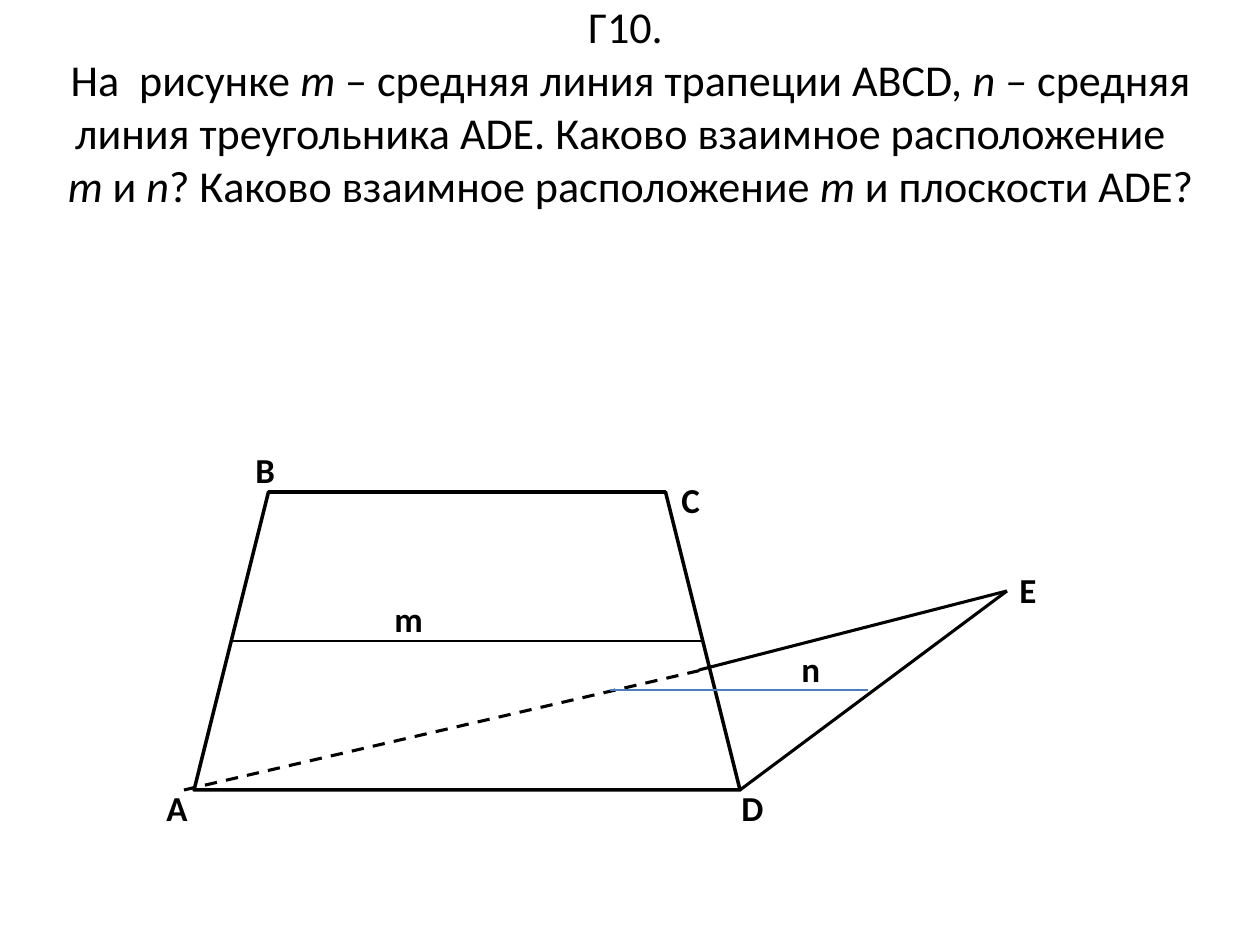
from pptx import Presentation
from pptx.dml.color import RGBColor as RGB
from pptx.enum.dml import MSO_LINE as Dash
from pptx.enum.shapes import MSO_CONNECTOR as Conn, MSO_SHAPE as Shape
from pptx.enum.text import MSO_ANCHOR as Anchor, PP_ALIGN as Align
from pptx.oxml.ns import qn
from pptx.util import Emu, Pt
from lxml import etree

BLACK = "000000"
BLUE = "4B7EBC"


def px(*vals):
    return [Emu(round(v * 914400 / 126)) for v in vals]


def style(font, **kind):
    """Give a font the common face and colour, plus the given values."""
    font.color.rgb = RGB.from_string(BLACK)
    for key, val in {"name": "Calibri", **kind}.items():
        setattr(font, key, val)


prs = Presentation()
prs.slide_width, prs.slide_height = px(1260, 945)
slide = prs.slides.add_slide(prs.slide_layouts[6])
shapes = slide.shapes

# Task text: stars enclose italics
task = (
    "Г10. \n"
    "На  рисунке *m* – средняя линия трапеции ABCD, *n – *средняя "
    "линия треугольника ADE. Каково взаимное расположение  \n"
    "*m *и *n*? Каково взаимное расположение *m *и плоскости ADE?"
)
frame = shapes.add_textbox(*px(35, 26, 1191, 159)).text_frame
frame.word_wrap = True
frame.vertical_anchor = Anchor.MIDDLE
para = frame.paragraphs[0]
para.alignment = Align.CENTER
style(para.font, size=Pt(25.2))
for i, part in enumerate(task.split("*")):
    for j, text in enumerate(part.split("\n")):
        if j:
            para.add_line_break()
        if text:
            run = para.add_run()
            run.text = text
            style(run.font, size=Pt(25.2), italic=i % 2 == 1)

# Trapezoid ABCD
trap = shapes.add_shape(Shape.TRAPEZOID, *px(194, 492, 546, 298))
trap.shadow.inherit = False
trap.fill.background()
trap.line.color.rgb = RGB.from_string(BLACK)
trap.line.width = Pt(2)

# Triangle sides and the two midlines
lines = [
    (740, 790, 1007, 591, 1.75, BLACK, None),
    (184, 790, 702, 670, 1.75, BLACK, Dash.DASH),
    (699, 670, 1007, 591, 1.75, BLACK, None),
    (231, 641, 702, 641, 0.75, BLACK, None),
    (610, 690, 868, 690, 0.75, BLUE, None),
]
for *ends, width, color, dash in lines:
    side = shapes.add_connector(Conn.STRAIGHT, *px(*ends))
    side.line.color.rgb = RGB.from_string(color)
    side.line.width = Pt(width)
    if dash:
        side.line.dash_style = dash
    etree.SubElement(side._element.spPr, qn("a:effectLst"))

# Letters
marks = [
    ("A", 154, 780, 73),
    ("B", 243, 442, 39),
    ("C", 669, 472, 39),
    ("D", 729, 780, 68),
    ("E", 1007, 562, 53),
    ("m", 382, 591, 69),
    ("n", 789, 641, 59),
]
for text, left, top, width in marks:
    frame = shapes.add_textbox(*px(left, top, width, 55)).text_frame
    frame.word_wrap = True
    run = frame.paragraphs[0].add_run()
    run.text = text
    style(run.font, size=Pt(20), bold=True)

prs.save("out.pptx")
